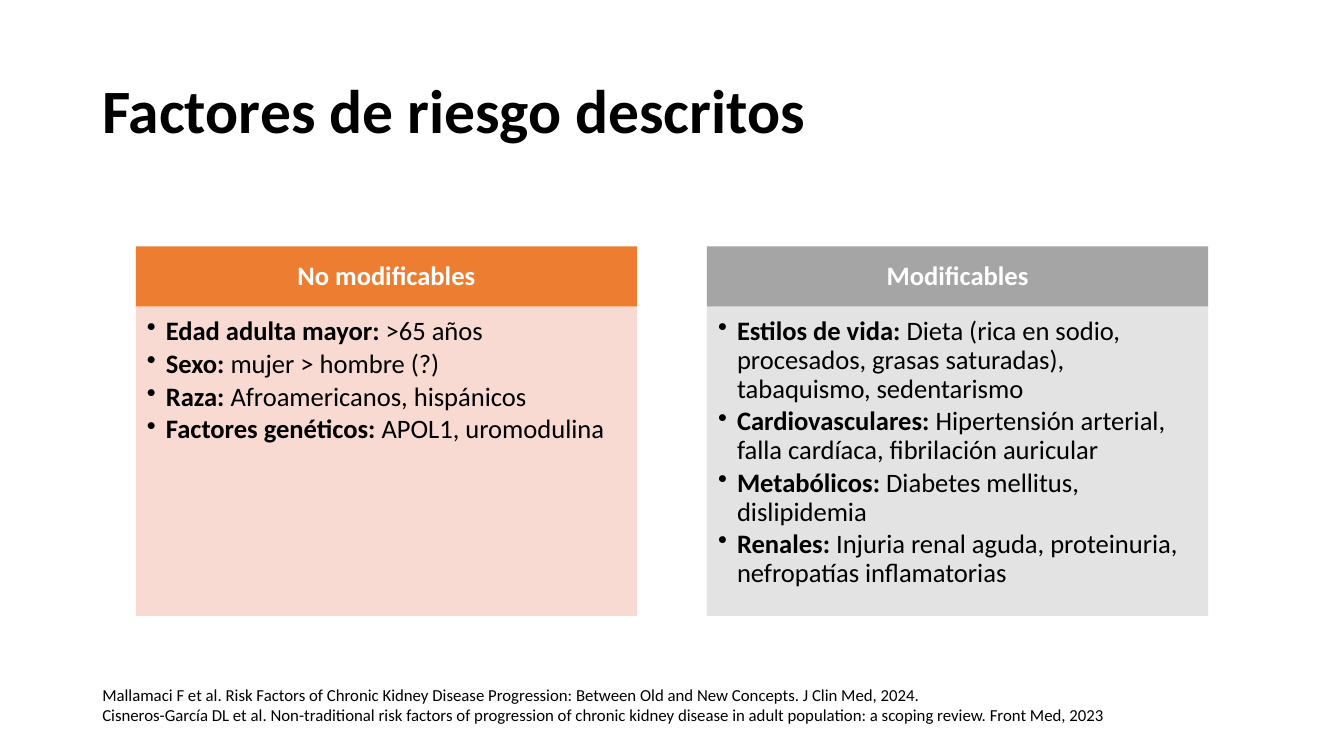
from lxml.etree import SubElement
from pptx import Presentation
from pptx.dml.color import RGBColor
from pptx.enum.shapes import MSO_SHAPE
from pptx.enum.text import MSO_ANCHOR, PP_ALIGN
from pptx.oxml.ns import qn
from pptx.util import Pt

BLACK = RGBColor(0x00, 0x00, 0x00)
WHITE = RGBColor(0xFF, 0xFF, 0xFF)
ORANGE = RGBColor(0xED, 0x7D, 0x31)
PALE_ORANGE = RGBColor(0xF8, 0xD7, 0xCE)
GRAY = RGBColor(0xA5, 0xA5, 0xA5)
PALE_GRAY = RGBColor(0xE1, 0xE1, 0xE1)

MARGIN, CONTENT_WIDTH = 66, 828
COLUMN_LEFT, COLUMN_WIDTH, COLUMN_STEP = 97, 358, 408
HEADER_TOP, HEADER_HEIGHT, BODY_HEIGHT = 176, 43, 221
INDENT = 13.5

presentation = Presentation()
presentation.slide_width = Pt(960)
presentation.slide_height = Pt(540)
slide = presentation.slides.add_slide(presentation.slide_layouts[6])


def set_font(paragraph, size, color, bold=None):
    paragraph.font.name = "Calibri"
    paragraph.font.size = Pt(size)
    paragraph.font.color.rgb = color
    paragraph.font.bold = bold


def add_panel(left, top, height, color, anchor, insets):
    panel = slide.shapes.add_shape(
        MSO_SHAPE.RECTANGLE, Pt(left), Pt(top), Pt(COLUMN_WIDTH), Pt(height))
    panel.shadow.inherit = False
    panel.fill.solid()
    panel.fill.fore_color.rgb = color
    panel.line.fill.background()
    frame = panel.text_frame
    frame.word_wrap = True
    frame.vertical_anchor = anchor
    (frame.margin_left, frame.margin_top,
     frame.margin_right, frame.margin_bottom) = [Pt(inset) for inset in insets]
    return panel


# Title
title = slide.shapes.add_textbox(
    Pt(MARGIN), Pt(28.75), Pt(CONTENT_WIDTH), Pt(104.4)).text_frame
title.word_wrap = True
title.vertical_anchor = MSO_ANCHOR.MIDDLE
title.text = "Factores de riesgo descritos"
title.paragraphs[0].line_spacing = 0.9
set_font(title.paragraphs[0], 44, BLACK, True)

# Risk factor columns
columns = [
    ("No modificables", ORANGE, PALE_ORANGE, [
        ("Edad adulta mayor:", " >65 años"),
        ("Sexo:", " mujer > hombre (?)"),
        ("Raza:", " Afroamericanos, hispánicos"),
        ("Factores genéticos:", " APOL1, uromodulina"),
    ]),
    ("Modificables", GRAY, PALE_GRAY, [
        ("Estilos de vida:", " Dieta (rica en sodio, procesados, grasas "
                             "saturadas), tabaquismo, sedentarismo"),
        ("Cardiovasculares:", " Hipertensión arterial, falla cardíaca, "
                              "fibrilación auricular"),
        ("Metabólicos:", " Diabetes mellitus, dislipidemia"),
        ("Renales:", " Injuria renal aguda, proteinuria, "
                     "nefropatías inflamatorias"),
    ]),
]
for index, (heading, header_color, body_color, factors) in enumerate(columns):
    left = COLUMN_LEFT + index * COLUMN_STEP
    header = add_panel(left, HEADER_TOP, HEADER_HEIGHT, header_color,
                       MSO_ANCHOR.MIDDLE, (10.8, 6, 10.8, 6))
    header.text_frame.text = heading
    heading_line = header.text_frame.paragraphs[0]
    heading_line.alignment = PP_ALIGN.CENTER
    heading_line.line_spacing = 0.9
    set_font(heading_line, 19, WHITE, True)

    body = add_panel(left, HEADER_TOP + HEADER_HEIGHT, BODY_HEIGHT, body_color,
                     MSO_ANCHOR.TOP, (8, 8, 10.8, 12))
    # Slightly transparent body fill
    body_fill = body.fill.fore_color._xFill
    SubElement(body_fill[0], qn("a:alpha"), val="90000")

    body.text_frame.text = "\n".join("" for factor in factors)
    for factor_line, (name, detail) in zip(body.text_frame.paragraphs, factors):
        factor_line.alignment = PP_ALIGN.LEFT
        factor_line.line_spacing = 0.9
        factor_line.space_after = Pt(2.85)
        set_font(factor_line, 19, BLACK)
        factor_line.add_run().text = name
        factor_line.runs[0].font.bold = True
        factor_line.add_run().text = detail
        # Bullet with hanging indent
        properties = factor_line._p.get_or_add_pPr()
        properties.set("marL", str(Pt(INDENT)))
        properties.set("indent", str(-Pt(INDENT)))
        bullet = properties.makeelement(qn("a:buChar"), {"char": "•"})
        properties.find(qn("a:defRPr")).addprevious(bullet)

# References
references = slide.shapes.add_textbox(
    Pt(MARGIN), Pt(487.5), Pt(CONTENT_WIDTH), Pt(32.4)).text_frame
references.word_wrap = True
references.vertical_anchor = MSO_ANCHOR.MIDDLE
references.text = (
    "Mallamaci F et al. Risk Factors of Chronic Kidney Disease Progression: "
    "Between Old and New Concepts. J Clin Med, 2024.\n"
    "Cisneros-García DL et al. Non-traditional risk factors of progression of "
    "chronic kidney disease in adult population: a scoping review. "
    "Front Med, 2023")
for reference in references.paragraphs:
    set_font(reference, 12, BLACK)

presentation.save("out.pptx")
